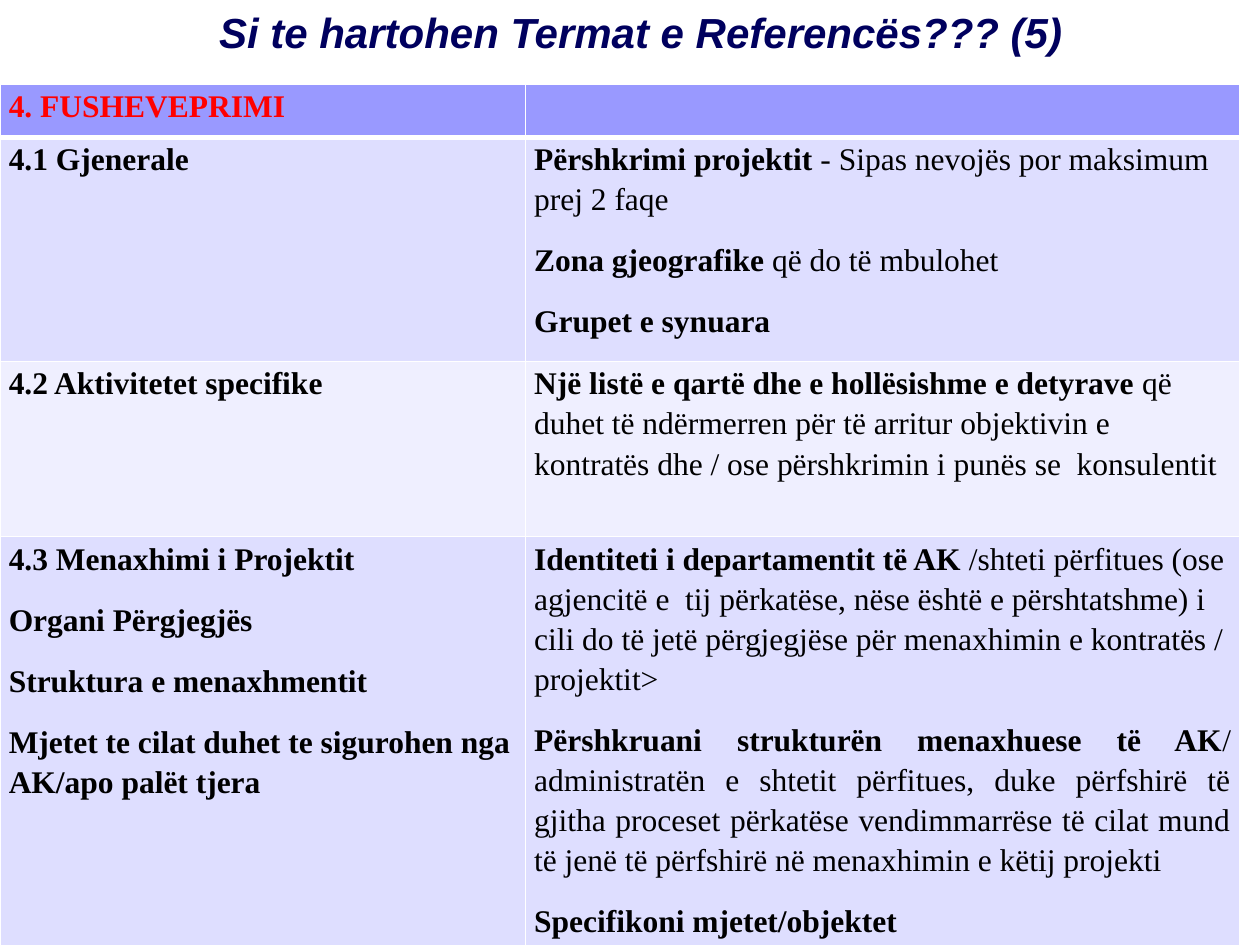
import pptx
import pptx.util
import pptx.dml.color
import pptx.enum.text
from lxml import etree
from pptx.oxml.ns import qn

Inches, Pt = pptx.util.Inches, pptx.util.Pt
RGBColor = pptx.dml.color.RGBColor
ALIGN = pptx.enum.text.PP_ALIGN

NAVY = RGBColor(0x00, 0x00, 0x5E)
RED = RGBColor(0xFF, 0x00, 0x00)
BLACK = RGBColor(0x00, 0x00, 0x00)
WHITE = RGBColor(0xFF, 0xFF, 0xFF)
HEAD = RGBColor(0x99, 0x99, 0xFF)
BANDS = [RGBColor(0xDE, 0xDE, 0xFF), RGBColor(0xEF, 0xEF, 0xFF)]

TITLE = "Si te hartohen Termat e Referencës??? (5)"
# Each cell is a list of paragraphs: (bold part, plain part, alignment)
LEFT, JUST = ALIGN.LEFT, ALIGN.JUSTIFY
ROWS = [
    ([("4. FUSHEVEPRIMI", "", LEFT)], []),
    ([("4.1 Gjenerale", "", LEFT)],
     [("Përshkrimi projektit",
       " - Sipas nevojës por maksimum prej 2 faqe", LEFT),
      ("Zona gjeografike", " që do të mbulohet", LEFT),
      ("Grupet e synuara", "", LEFT)]),
    ([("4.2 Aktivitetet specifike", "", LEFT)],
     [("Një listë e qartë dhe e hollësishme e detyrave",
       " që duhet të ndërmerren për të arritur objektivin e kontratës"
       " dhe / ose përshkrimin i punës se  konsulentit", LEFT)]),
    ([("4.3 Menaxhimi i Projektit", "", LEFT),
      ("Organi Përgjegjës", "", LEFT),
      ("Struktura e menaxhmentit", "", LEFT),
      ("Mjetet te cilat duhet te sigurohen nga AK/apo palët tjera", "", LEFT)],
     [("Identiteti i departamentit të AK ",
       "/shteti përfitues (ose agjencitë e  tij përkatëse, nëse është e"
       " përshtatshme) i cili do të jetë përgjegjëse për menaxhimin e"
       " kontratës / projektit>", LEFT),
      ("Përshkruani strukturën menaxhuese të AK",
       "/ administratën e shtetit përfitues, duke përfshirë të gjitha"
       " proceset përkatëse vendimmarrëse të cilat mund të jenë të"
       " përfshirë në menaxhimin e këtij projekti ", JUST),
      ("Specifikoni mjetet/objektet", "", LEFT)]),
]
WIDTHS = [4.17, 5.67]
HEIGHTS = [0.42, 1.78, 1.39, 3.57]


def style(font, name, size, color, bold, italic=False):
    font.name, font.size, font.bold, font.italic = name, Pt(size), bold, italic
    font.color.rgb = color


def border(cell, row):
    """Draw white cell edges, thicker between the header and the body."""
    props = cell._tc.get_or_add_tcPr()
    for side in "LRTB":
        thick = (row, side) in ((0, "B"), (1, "T"))
        line = etree.SubElement(props, qn("a:ln" + side),
                                w=str(Pt(3 if thick else 1)))
        paint = etree.SubElement(line, qn("a:solidFill"))
        etree.SubElement(paint, qn("a:srgbClr"), val=str(WHITE))


def write(cell, paras, color):
    frame = cell.text_frame
    for i, (bold, plain, align) in enumerate(paras):
        para = frame.add_paragraph() if i else frame.paragraphs[0]
        para.alignment = align
        para.line_spacing = 1.15
        para.space_before = Pt(12 if i else 0)
        for text, heavy in ((bold, True), (plain, False)):
            if text:
                run = para.add_run()
                run.text = text
                style(run.font, "Times New Roman", 18, color, heavy)


deck = pptx.Presentation()
deck.slide_width, deck.slide_height = Inches(10), Inches(7.5)
slide = deck.slides.add_slide(deck.slide_layouts[5])

title = slide.shapes.title
title.left, title.top = Inches(0.67), Inches(0)
title.width, title.height = Inches(8.83), Inches(0.92)
frame = title.text_frame
frame.text = TITLE
frame.word_wrap = True
frame.vertical_anchor = pptx.enum.text.MSO_ANCHOR.TOP
frame.paragraphs[0].alignment = ALIGN.CENTER
style(frame.paragraphs[0].runs[0].font, "Arial", 24, NAVY, True, True)

table = slide.shapes.add_table(
    len(ROWS), len(WIDTHS), Inches(0), Inches(0.67),
    Inches(sum(WIDTHS)), Inches(sum(HEIGHTS))).table
for col, width in zip(table.columns, WIDTHS):
    col.width = Inches(width)
for r, (height, cells) in enumerate(zip(HEIGHTS, ROWS)):
    table.rows[r].height = Inches(height)
    for c, paras in enumerate(cells):
        cell = table.cell(r, c)
        cell.margin_left = cell.margin_right = Inches(0.07)
        cell.margin_top = cell.margin_bottom = Inches(0)
        border(cell, r)
        cell.fill.solid()
        cell.fill.fore_color.rgb = BANDS[(r - 1) % 2] if r else HEAD
        write(cell, paras, BLACK if r else RED)

deck.save("out.pptx")
